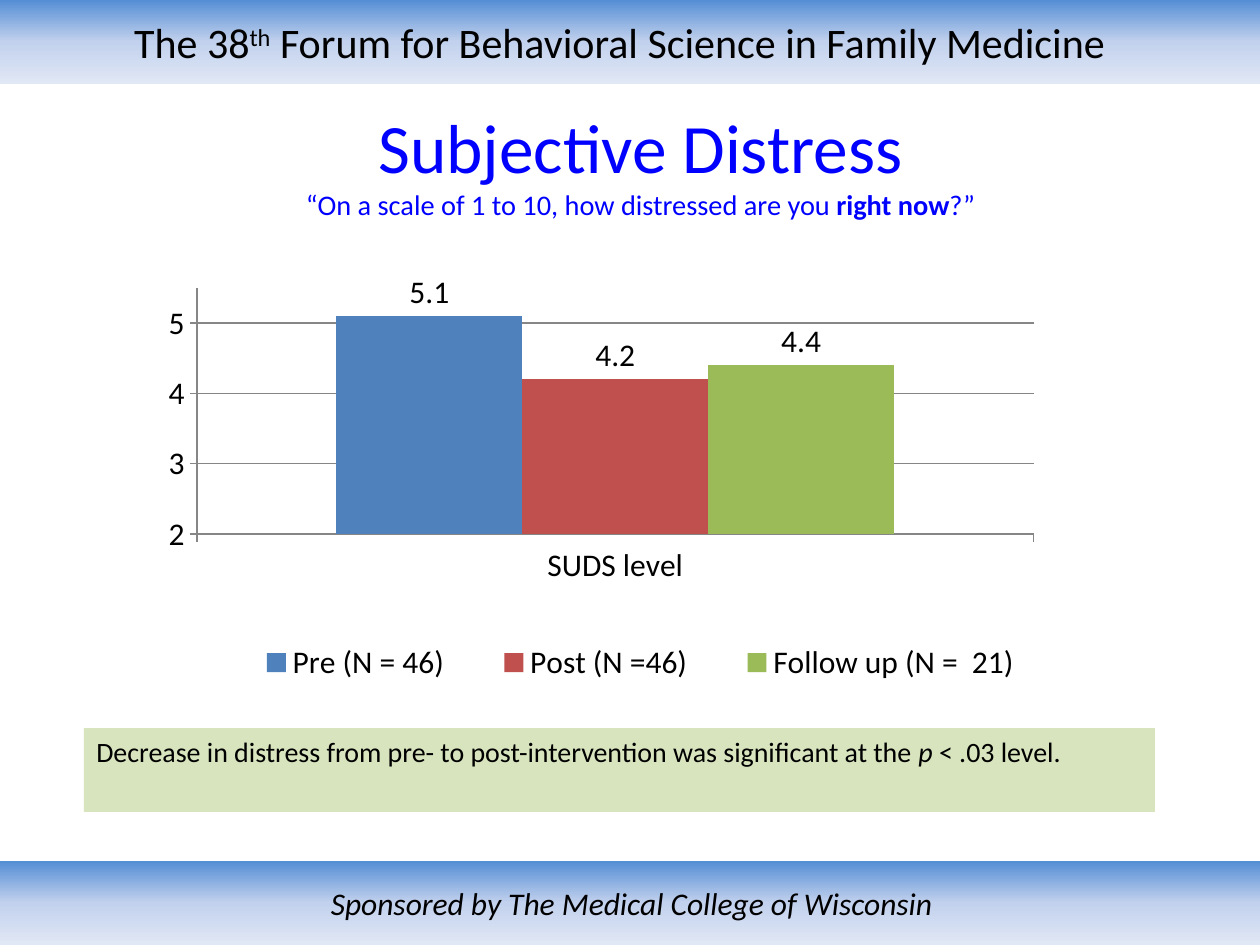
from copy import deepcopy
from lxml import etree
from pptx import Presentation
from pptx import util as u
from pptx.chart import data as chart_data
from pptx.dml import color
from pptx.enum import chart as c, shapes, text
from pptx.oxml import ns

Pt = u.Pt
COLORS = {
    "black": "000000", "title": "0000FF", "note": "D7E4BD", "axis": "868686",
    "band_top": "558ED5", "band_middle": "C2D1ED", "band_bottom": "E1E8F5",
    "pre": "4F81BD", "post": "C0504D", "follow_up": "9BBB59",
}


def rgb(name):
    return color.RGBColor.from_string(COLORS[name])


def write_runs(paragraph, runs, name, alignment):
    paragraph.alignment = alignment
    for words, formats in runs:
        if words == "\n":
            paragraph.add_line_break()
            continue
        run = paragraph.add_run()
        run.text = words
        run.font.name = "Calibri"
        run.font.color.rgb = rgb(name)
        for key, value in formats.items():
            if key == "baseline":
                run.font._element.set(key, value)
            else:
                setattr(run.font, key, value)


presentation = Presentation()
presentation.slide_width, presentation.slide_height = Pt(720), Pt(540)
slide = presentation.slides.add_slide(presentation.slide_layouts[6])

header = {"size": Pt(24)}
bands = [
    (0, 720, 18.7, [("The 38", header), ("th", {**header, "baseline": "30000"}),
                    (" Forum for Behavioral Science in Family Medicine", header)]),
    (492, 722, 7.2, [("Sponsored by The Medical College of Wisconsin",
                      {"size": Pt(18), "italic": True})]),
]
for top, width, margin_right, runs in bands:
    band = slide.shapes.add_shape(shapes.MSO_SHAPE.RECTANGLE, 0, Pt(top), Pt(width), Pt(48))
    band.shadow.inherit = False
    band.line.fill.background()
    band.fill.gradient()
    band.fill.gradient_angle = 270
    stop_list = band._element.spPr.find(".//" + ns.qn("a:gsLst"))
    stop_list.append(deepcopy(stop_list[0]))
    stops = zip(band.fill.gradient_stops, (0, 0.5, 1), ("band_top", "band_middle", "band_bottom"))
    for stop, position, name in stops:
        stop.position = position
        stop.color.rgb = rgb(name)
    frame = band.text_frame
    frame.word_wrap = True
    frame.margin_right = Pt(margin_right)
    frame.vertical_anchor = text.MSO_ANCHOR.MIDDLE
    write_runs(frame.paragraphs[0], runs, "black", text.PP_ALIGN.CENTER)

title = slide.shapes.add_textbox(Pt(42), Pt(66), Pt(648), Pt(54))
title.text_frame.word_wrap = True
title.text_frame.vertical_anchor = text.MSO_ANCHOR.MIDDLE
question = {"size": Pt(16.2)}
write_runs(title.text_frame.paragraphs[0], [
    ("Subjective Distress", {"size": Pt(39.6)}),
    ("\n", {}),
    ("“On a scale of 1 to 10, how distressed are you ", question),
    ("right now", {**question, "bold": True}),
    ("?”", question),
], "title", text.PP_ALIGN.CENTER)

distress = chart_data.CategoryChartData()
distress.categories = ["SUDS level"]
for name, value in (("Pre (N = 46)", 5.1), ("Post (N =46)", 4.2), ("Follow up (N =  21)", 4.4)):
    distress.add_series(name, [value])
chart = slide.shapes.add_chart(c.XL_CHART_TYPE.COLUMN_CLUSTERED,
                               Pt(78), Pt(140), Pt(576), Pt(306), distress).chart
chart.has_title = False
chart.font.name = "Calibri"
chart.font.size = Pt(18)
chart.font.color.rgb = rgb("black")
chart.has_legend = True
chart.legend.position = c.XL_LEGEND_POSITION.BOTTOM
chart.legend.include_in_layout = False

plot = chart.plots[0]
plot.gap_width = 150
plot.overlap = 0
plot.vary_by_categories = False
for series, name in zip(plot.series, ("pre", "post", "follow_up")):
    series.format.fill.solid()
    series.format.fill.fore_color.rgb = rgb(name)
    series.invert_if_negative = False
    labels = series.data_labels
    labels.show_value = True
    labels.position = c.XL_LABEL_POSITION.OUTSIDE_END

values = chart.value_axis
for key, value in {"minimum_scale": 2, "maximum_scale": 5.5, "major_unit": 1,
                   "has_major_gridlines": True}.items():
    setattr(values, key, value)
values.tick_labels.number_format = "0"
values.tick_labels.number_format_is_linked = False
for axis in (chart.category_axis, values):
    axis.major_tick_mark = c.XL_TICK_MARK.OUTSIDE
    axis.minor_tick_mark = c.XL_TICK_MARK.NONE
for part in (chart.category_axis, values, values.major_gridlines):
    part.format.line.color.rgb = rgb("axis")
    part.format.line.width = Pt(0.75)

plot_area = chart._chartSpace.chart.plotArea
for old in plot_area.findall(ns.qn("c:layout")):
    plot_area.remove(old)
legend = chart.legend._element
for old in legend.findall(ns.qn("c:layout")):
    legend.remove(old)
layouts = [
    (plot_area, 0, "inner", (0.06, 0.08, 0.83, 0.46)),
    (legend, 1, None, (0.08, 0.73, 0.84, 0.1)),
]
for parent, index, target, box in layouts:
    layout = etree.Element(ns.qn("c:layout"))
    manual = etree.SubElement(layout, ns.qn("c:manualLayout"))
    settings = [("layoutTarget", target)] if target else []
    settings += [("xMode", "edge"), ("yMode", "edge"), *zip("xywh", box)]
    for tag, value in settings:
        etree.SubElement(manual, ns.qn("c:" + tag)).set("val", str(value))
    parent.insert(index, layout)

note = slide.shapes.add_shape(shapes.MSO_SHAPE.RECTANGLE, Pt(48), Pt(416), Pt(612), Pt(48))
note.shadow.inherit = False
note.fill.solid()
note.fill.fore_color.rgb = rgb("note")
note.line.fill.background()
note.text_frame.word_wrap = True
note.text_frame.vertical_anchor = text.MSO_ANCHOR.TOP
body = {"size": Pt(16)}
write_runs(note.text_frame.paragraphs[0], [
    ("Decrease in distress from pre- to post-intervention was significant at the ", body),
    ("p", {**body, "italic": True}),
    (" < .03 level.", body),
], "black", text.PP_ALIGN.LEFT)

presentation.save("out.pptx")
